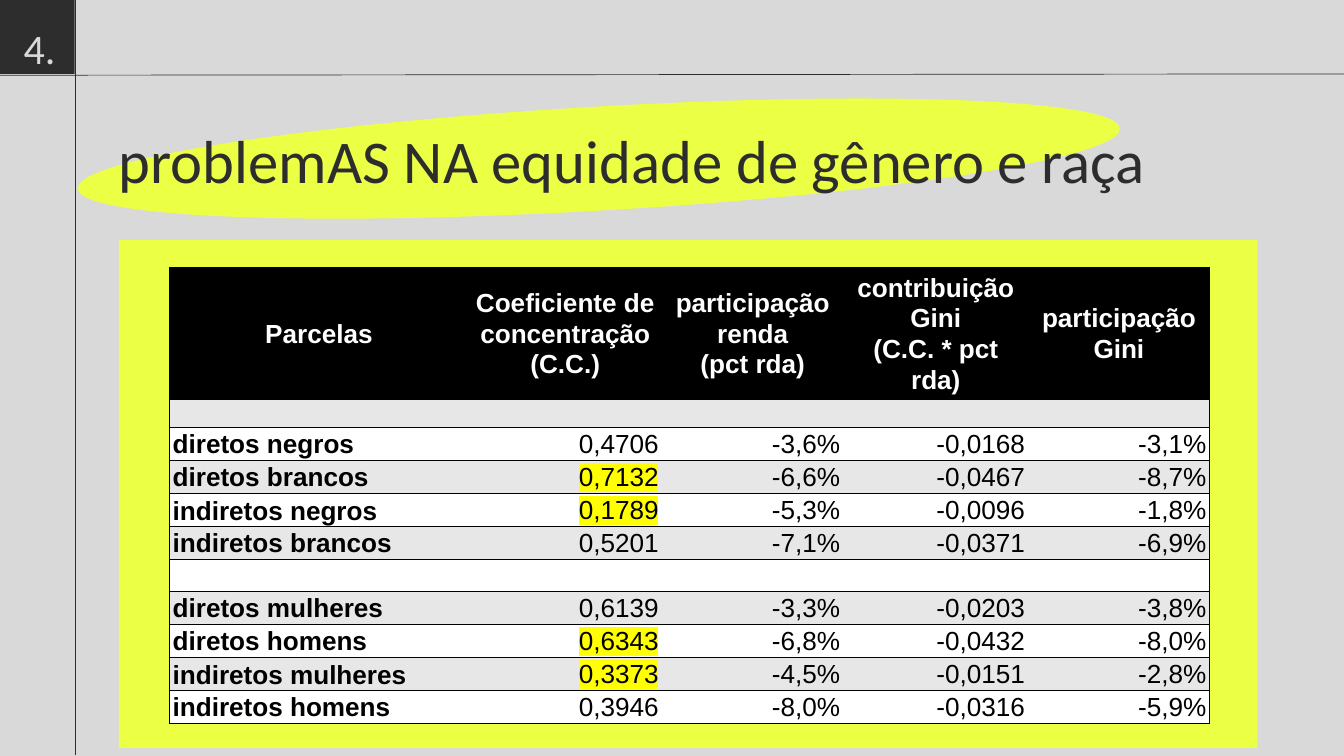
"""Build the slide on gender and race equity problems with its Gini table."""
from dataclasses import dataclass

from lxml.etree import SubElement
from pptx import Presentation
from pptx.dml.color import RGBColor
from pptx.enum.shapes import MSO_CONNECTOR as Connector, MSO_SHAPE as Shape
from pptx.enum.text import MSO_ANCHOR as Anchor, PP_ALIGN as Align
from pptx.oxml import parse_xml
from pptx.oxml.ns import nsdecls, qn
from pptx.util import Inches, Pt


@dataclass(frozen=True)
class Theme:
    ground: str = "D9D9D9"
    ink: str = "2D2D2D"
    accent: str = "EBFF45"
    black: str = "000000"
    white: str = "FFFFFF"
    band: str = "E7E7E7"
    marker: str = "FFFF00"
    title_size: int = 65
    number_size: int = 45
    table_size: int = 28
    title_font: str = "Calibri"
    table_font: str = "Arial"


theme = Theme()


def style(frame, font, size, color, bold=False, align=Align.LEFT, spacing=1.0):
    for para in frame.paragraphs:
        para.alignment = align
        para.line_spacing = spacing
        for span in para.runs:
            span.font.size = Pt(size)
            span.font.bold = bold
            span.font.color.rgb = RGBColor.from_string(color)
            span.font.name = font


def add_border(cell, side):
    cell._tc.get_or_add_tcPr().append(parse_xml(
        f'<a:ln{side} {nsdecls("a")} w="12700"><a:solidFill>'
        f'<a:srgbClr val="{theme.black}"/></a:solidFill></a:ln{side}>'))


deck = Presentation()
deck.slide_width, deck.slide_height = Inches(20), Inches(11.25)
page = deck.slides.add_slide(deck.slide_layouts[6])
page.background.fill.solid()
page.background.fill.fore_color.rgb = RGBColor.from_string(theme.ground)

for kind, place, color, turn in [
    (Shape.OVAL, (1.16, 1.6, 15.5, 1.52), theme.accent, 356.7),
    (Shape.RECTANGLE, (1.77, 3.57, 16.94, 7.56), theme.accent, 0),
    (Shape.RECTANGLE, (-0.01, -0.02, 1.12, 1.12), theme.ink, 0),
]:
    block = page.shapes.add_shape(kind, *map(Inches, place))
    block.shadow.inherit = False
    block.rotation = turn
    block.fill.solid()
    block.fill.fore_color.rgb = RGBColor.from_string(color)
    if kind == Shape.OVAL:
        block.line.color.rgb = RGBColor.from_string(color)
        block.line.width = Pt(2)
    else:
        block.line.fill.background()

for ends in [(1.12, -0.01, 1.12, 11.24), (20, 1.1, 0, 1.12)]:
    rule = page.shapes.add_connector(Connector.STRAIGHT, *map(Inches, ends))
    rule.line.color.rgb = RGBColor.from_string(theme.ink)
    rule.line.width = Pt(0.75)
    SubElement(rule._element.spPr, qn("a:effectLst"))

for text, place, size, color, align, spacing in [
    ("problemAS NA equidade de gênero e raça", (1.77, 1.83, 16.72, 1.09),
     theme.title_size, theme.ink, Align.LEFT, 1.0),
    ("4.", (0.35, 0.11, 0.48, 0.98),
     theme.number_size, theme.ground, Align.CENTER, 1.3),
]:
    frame = page.shapes.add_textbox(*map(Inches, place)).text_frame
    frame.word_wrap = True
    frame.margin_left = frame.margin_right = 0
    frame.margin_top = frame.margin_bottom = 0
    frame.text = text
    style(frame, theme.title_font, size, color, align=align, spacing=spacing)

rows = [
    ("Parcelas", "Coeficiente de concentração\n(C.C.)", "participação renda\n(pct rda)",
     "contribuição Gini\n(C.C. * pct rda)", "participação Gini"),
    ("",) * 5,
    ("diretos negros", "0,4706", "-3,6%", "-0,0168", "-3,1%"),
    ("diretos brancos", "0,7132", "-6,6%", "-0,0467", "-8,7%"),
    ("indiretos negros", "0,1789", "-5,3%", "-0,0096", "-1,8%"),
    ("indiretos brancos", "0,5201", "-7,1%", "-0,0371", "-6,9%"),
    ("",) * 5,
    ("diretos mulheres", "0,6139", "-3,3%", "-0,0203", "-3,8%"),
    ("diretos homens", "0,6343", "-6,8%", "-0,0432", "-8,0%"),
    ("indiretos mulheres", "0,3373", "-4,5%", "-0,0151", "-2,8%"),
    ("indiretos homens", "0,3946", "-8,0%", "-0,0316", "-5,9%"),
]
widths = [4.45, 2.88, 2.7, 2.75, 2.7]
heights = [1.85, 0.42] + [0.47] * 4 + [0.48] + [0.47] * 4
marked = {"0,7132", "0,1789", "0,6343", "0,3373"}
low_labels = {"indiretos negros", "indiretos mulheres"}

holder = page.shapes.add_table(len(rows), len(widths), Inches(2.52), Inches(3.98),
                               Inches(sum(widths)), Inches(sum(heights)))
table = holder.table
table.horz_banding = False
holder._element.find(f".//{qn('a:tableStyleId')}").text = "{2D5ABB26-0587-4C30-8999-92F81FD0307C}"
for column, width in zip(table.columns, widths):
    column.width = Inches(width)

for r, (row, height) in enumerate(zip(rows, heights)):
    table.rows[r].height = Inches(height)
    for c, text in enumerate(row):
        cell = table.cell(r, c)
        header, label = r == 0, c == 0
        cell.margin_left = cell.margin_right = Inches(0.05)
        cell.margin_top = cell.margin_bottom = 0
        cell.vertical_anchor = Anchor.BOTTOM if text in low_labels else Anchor.MIDDLE
        if label:
            add_border(cell, "L")
        if c == len(widths) - 1:
            add_border(cell, "R")
        add_border(cell, "T")
        add_border(cell, "B")
        fill = theme.black if header else theme.band if r % 2 else theme.white
        cell.fill.solid()
        cell.fill.fore_color.rgb = RGBColor.from_string(fill)
        cell.text_frame.text = text
        align = Align.CENTER if header else Align.LEFT if label else Align.RIGHT
        style(cell.text_frame, theme.table_font, theme.table_size,
              theme.white if header else theme.black, header or label, align, 1.05)
        if text in marked:
            span = cell.text_frame.paragraphs[0].runs[0]
            span.font._element.find(qn("a:solidFill")).addnext(parse_xml(
                f'<a:highlight {nsdecls("a")}><a:srgbClr val="{theme.marker}"/></a:highlight>'))

deck.save("out.pptx")
